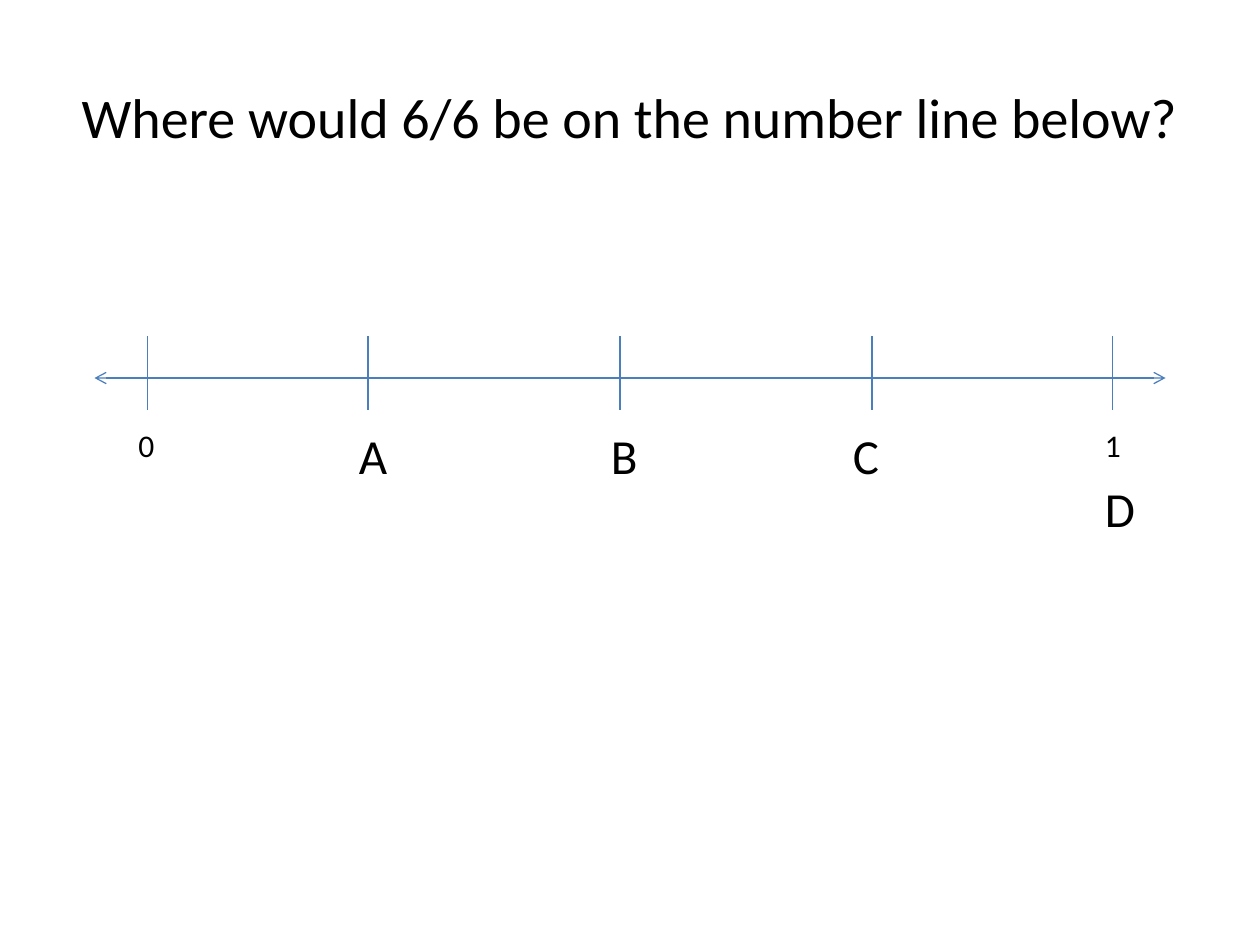
import pptx
import pptx.util
import pptx.dml.color
import pptx.enum.shapes
import pptx.enum.text
from lxml import etree
from pptx.oxml.ns import qn

Inches, Pt = pptx.util.Inches, pptx.util.Pt
RGB = pptx.dml.color.RGBColor
ALIGN = pptx.enum.text.PP_ALIGN
ANCHOR = pptx.enum.text.MSO_ANCHOR

TITLE = "Where would 6/6 be on the number line below?"
COLORS = {"line": "4B7EBC", "text": "000000"}
FONT = "Calibri"
W, H = 10, 7.5

AXIS_Y = 0.4 * H
AXIS_X = (0.075 * W, 0.925 * W)
TICK_Y = (2.67, 3.25)
ENDS = (1.17, 8.83)
INNER = [2.92 + 2 * i for i in range(3)]

# Label rows: top, and per size the box width and height
ROWS = (3.33, 3.75)
BOXES = {18: (0.75, 0.4), 28: (1, 0.57)}
LABELS = [  # text, left, row, size
    ("0", 1, 0, 18),
    ("A", 2.75, 0, 28),
    ("B", 4.75, 0, 28),
    ("C", 6.67, 0, 28),
    ("1", 8.67, 0, 18),
    ("D", 8.67, 1, 28),
]


def add_text(s, text, left, top, width, height, size,
             align=ALIGN.LEFT, anchor=ANCHOR.TOP):
    sp = s.shapes.add_textbox(*map(Inches, (left, top, width, height)))
    tf = sp.text_frame
    tf.word_wrap = True
    tf.vertical_anchor = anchor
    p = tf.paragraphs[0]
    p.text = text
    p.alignment = align
    p.font.size = Pt(size)
    p.font.name = FONT
    p.font.color.rgb = RGB.from_string(COLORS["text"])


def add_line(s, x1, y1, x2, y2, arrows=False):
    sp = s.shapes.add_connector(pptx.enum.shapes.MSO_CONNECTOR.STRAIGHT,
                                *map(Inches, (x1, y1, x2, y2)))
    sp.line.width = Pt(0.75)
    sp.line.color.rgb = RGB.from_string(COLORS["line"])
    if arrows:
        ln = sp.line._get_or_add_ln()
        for end in ("a:headEnd", "a:tailEnd"):
            etree.SubElement(ln, qn(end), type="arrow")
    etree.SubElement(sp._element.spPr, qn("a:effectLst"))


prs = pptx.Presentation()
prs.slide_width, prs.slide_height = Inches(W), Inches(H)
s = prs.slides.add_slide(prs.slide_layouts[6])

add_text(s, TITLE, 0.05 * W, 0.04 * H, 0.9 * W, 1.25, 32,
         ALIGN.CENTER, ANCHOR.MIDDLE)

add_line(s, AXIS_X[0], AXIS_Y, AXIS_X[1], AXIS_Y, arrows=True)
for x in (*ENDS, *INNER):
    add_line(s, x, TICK_Y[0], x, TICK_Y[1])

for text, left, row, size in LABELS:
    add_text(s, text, left, ROWS[row], *BOXES[size], size)

prs.save("out.pptx")
